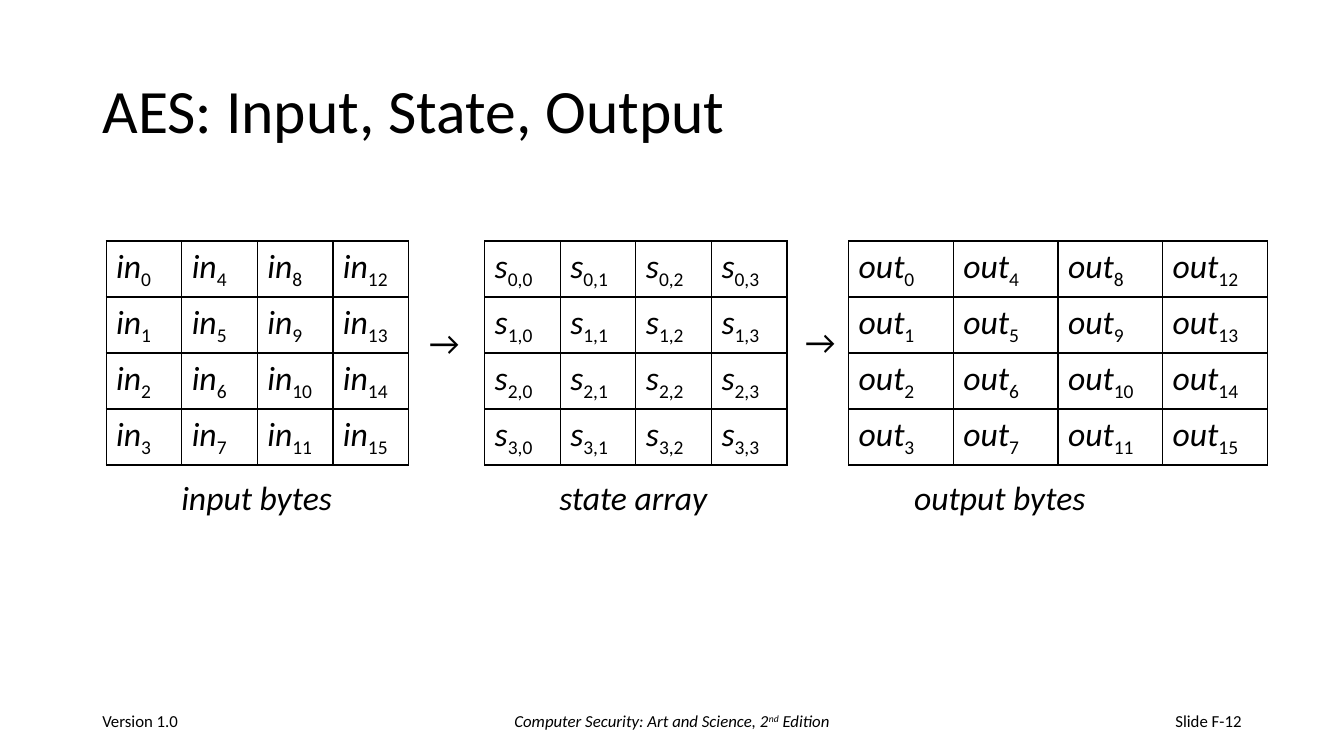
from lxml.etree import SubElement
from pptx import Presentation
from pptx.dml.color import RGBColor
from pptx.enum.text import MSO_ANCHOR, MSO_AUTO_SIZE, PP_ALIGN
from pptx.oxml.ns import qn
from pptx.util import Pt

COLORS = {"ink": "000000"}
FONT = "Calibri"
GRID_SIZE = 4
GRID_TOP, GRID_HEIGHT = 172.2, 144
CAPTION_TOP = 337


class SlideBuilder:
    """Holds the text style and the slide being filled."""

    def __init__(self, slide):
        self.slide = slide
        self.color = RGBColor.from_string(COLORS["ink"])

    def add_runs(self, paragraph, pieces, size):
        """Add runs given as (text, italic, baseline in percent)."""
        for text, italic, baseline in pieces:
            run = paragraph.add_run()
            run.text = text
            style = {"name": FONT, "size": Pt(size), "italic": italic, "bold": False}
            for name, value in style.items():
                setattr(run.font, name, value)
            run.font.color.rgb = self.color
            if baseline:
                run._r.get_or_add_rPr().set("baseline", str(baseline * 1000))

    def title(self, text, left, top, width, height):
        shape = self.slide.shapes.title
        place = {"left": left, "top": top, "width": width, "height": height}
        for name, value in place.items():
            setattr(shape, name, Pt(value))
        shape.text_frame.vertical_anchor = MSO_ANCHOR.MIDDLE
        paragraph = shape.text_frame.paragraphs[0]
        paragraph.alignment = PP_ALIGN.LEFT
        paragraph.line_spacing = 0.9
        self.add_runs(paragraph, [(text, False, 0)], 44)

    def text(self, pieces, left, top, width, height, size, **frame_format):
        shape = self.slide.shapes.add_textbox(Pt(left), Pt(top), Pt(width), Pt(height))
        paragraph = shape.text_frame.paragraphs[0]
        paragraph.alignment = frame_format.pop("alignment", PP_ALIGN.LEFT)
        for name, value in frame_format.items():
            setattr(shape.text_frame, name, value)
        self.add_runs(paragraph, pieces, size)

    def label(self, text, left, top, width, italic):
        self.text([(text, italic, 0)], left, top, width, 36, 24, word_wrap=False,
                  auto_size=MSO_AUTO_SIZE.SHAPE_TO_FIT_TEXT)

    def footer(self, pieces, left, width, alignment):
        self.text(pieces, left, 500.5, width, 28.8, 12, alignment=alignment,
                  word_wrap=True, vertical_anchor=MSO_ANCHOR.MIDDLE)

    def border(self, cell):
        properties = cell._tc.get_or_add_tcPr()
        for side in ("a:lnL", "a:lnR", "a:lnT", "a:lnB"):
            line = SubElement(properties, qn(side), w=str(Pt(1)))
            fill = SubElement(line, qn("a:solidFill"))
            SubElement(fill, qn("a:srgbClr"), val=COLORS["ink"])

    def byte_grid(self, symbol, subscript, left, width):
        frame = self.slide.shapes.add_table(
            GRID_SIZE, GRID_SIZE, Pt(left), Pt(GRID_TOP), Pt(width), Pt(GRID_HEIGHT))
        table = frame.table
        for name in ("first_row", "horz_banding"):
            setattr(table, name, False)
        for row in range(GRID_SIZE):
            for column in range(GRID_SIZE):
                cell = table.cell(row, column)
                self.border(cell)
                cell.fill.background()
                pieces = [(symbol, True, 0), (subscript(row, column), False, -25)]
                self.add_runs(cell.text_frame.paragraphs[0], pieces, 24)


def byte_index(row, column):
    return str(row + GRID_SIZE * column)


def state_index(row, column):
    return f"{row},{column}"


def main():
    presentation = Presentation()
    presentation.slide_width, presentation.slide_height = Pt(960), Pt(540)
    slide = presentation.slides.add_slide(presentation.slide_layouts[5])
    builder = SlideBuilder(slide)

    # Title
    builder.title("AES: Input, State, Output", 66, 28.8, 828, 104.4)

    # Footer
    builder.footer([("Version 1.0", False, 0)], 66, 216, PP_ALIGN.LEFT)
    builder.footer([("Computer Security: Art and Science, 2", True, 0),
                    ("nd", True, 30), (" Edition", True, 0)],
                   318, 324, PP_ALIGN.CENTER)
    builder.footer([("Slide F-12", False, 0)], 678, 216, PP_ALIGN.RIGHT)

    # Grids with their captions
    for symbol, subscript, left, width, caption, caption_left, caption_width in (
        ("in", byte_index, 75.8, 216, "input bytes", 122.4, 123),
        ("s", state_index, 346.2, 216, "state array", 392.4, 121.7),
        ("out", byte_index, 606.2, 299, "output bytes", 645.8, 138.2),
    ):
        builder.byte_grid(symbol, subscript, left, width)
        builder.label(caption, caption_left, CAPTION_TOP, caption_width, True)

    # Arrows between the grids
    for left, top in ((299.5, 226.1), (568.1, 225.4)):
        builder.label("→", left, top, 36.7, False)

    presentation.save("out.pptx")


if __name__ == "__main__":
    main()
